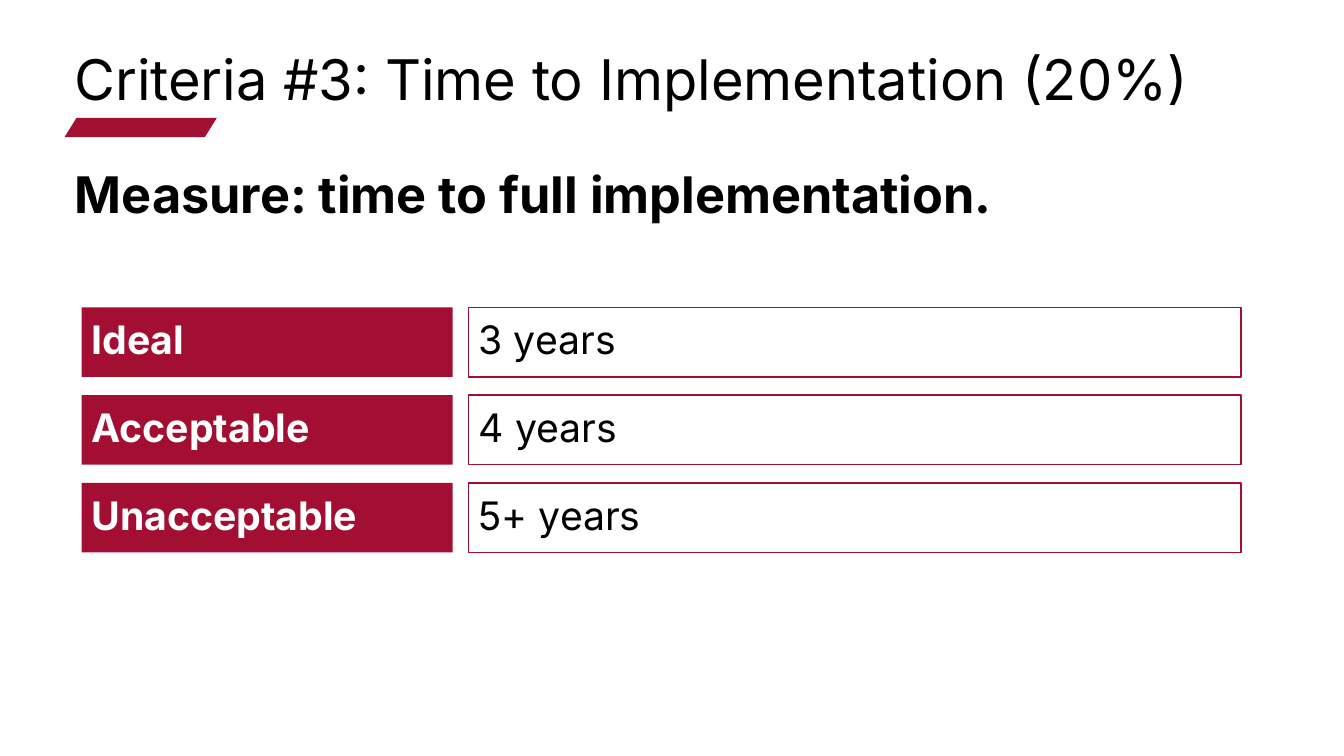
"""Build the slide that rates time to implementation."""
from dataclasses import dataclass

from lxml.etree import SubElement
from pptx import Presentation
from pptx.dml.color import RGBColor
from pptx.enum.shapes import MSO_SHAPE as Preset
from pptx.enum.text import MSO_ANCHOR as Anchor, MSO_AUTO_SIZE as AutoSize, PP_ALIGN as Align
from pptx.oxml.ns import qn
from pptx.shapes.base import BaseShape
from pptx.slide import Slide
from pptx.util import Emu, Pt

PX = 9144
FONT = "Inter"
COLORS = {"crimson": "A30F32", "white": "FFFFFF", "black": "000000"}
ROW_TOP, ROW_PITCH, ROW_HEIGHT = 305, 87, 69


@dataclass(frozen=True)
class Box:
    left: int
    top: int
    width: int
    height: int

    def emu(self) -> list[Emu]:
        return [Emu(value * PX) for value in (self.left, self.top, self.width, self.height)]


@dataclass(frozen=True)
class TextStyle:
    size: int
    color: str
    bold: bool = False
    anchor: Anchor = Anchor.TOP


@dataclass(frozen=True)
class Column:
    left: int
    width: int
    fill: str
    style: TextStyle
    texts: tuple[str, ...]


COLUMNS = (
    Column(81, 368, "crimson", TextStyle(28, "white", True, Anchor.MIDDLE),
           ("Ideal", "Acceptable", "Unacceptable")),
    Column(465, 766, "white", TextStyle(28, "black", False, Anchor.MIDDLE),
           ("3 years", "4 years", "5+ years")),
)


def rgb(name: str) -> RGBColor:
    return RGBColor.from_string(COLORS[name])


def write(shape: BaseShape, text: str, style: TextStyle) -> None:
    frame = shape.text_frame
    frame.text = text
    frame.word_wrap = True
    frame.auto_size = AutoSize.NONE
    frame.vertical_anchor = style.anchor
    paragraph = frame.paragraphs[0]
    paragraph.alignment = Align.LEFT
    paragraph.line_spacing = 0.9
    paragraph.space_before = Pt(0)
    font = paragraph.runs[0].font
    font.name, font.size, font.bold = FONT, Pt(style.size), style.bold
    font.color.rgb = rgb(style.color)


def fill_placeholder(shape: BaseShape, box: Box, text: str, style: TextStyle) -> None:
    shape.left, shape.top, shape.width, shape.height = box.emu()
    write(shape, text, style)
    properties = shape.text_frame.paragraphs[0]._p.get_or_add_pPr()
    properties.set("marL", "0")
    properties.set("indent", "0")
    SubElement(properties, qn("a:buNone"))


def add_panel(slide: Slide, preset: Preset, box: Box, fill: str) -> BaseShape:
    shape = slide.shapes.add_shape(preset, *box.emu())
    shape.shadow.inherit = False
    shape.fill.solid()
    shape.fill.fore_color.rgb = rgb(fill)
    shape.line.fill.background()
    return shape


def add_column(slide: Slide, column: Column) -> None:
    for row, text in enumerate(column.texts):
        box = Box(column.left, ROW_TOP + row * ROW_PITCH, column.width, ROW_HEIGHT)
        cell = add_panel(slide, Preset.RECTANGLE, box, column.fill)
        if column.fill == "white":
            cell.line.color.rgb = rgb("crimson")
            cell.line.width = Pt(1)
        write(cell, text, column.style)


def main() -> None:
    presentation = Presentation()
    presentation.slide_width, presentation.slide_height = Emu(1333 * PX), Emu(750 * PX)
    slide = presentation.slides.add_slide(presentation.slide_layouts[1])
    accent = add_panel(slide, Preset.PARALLELOGRAM, Box(64, 117, 151, 19), "crimson")
    accent.adjustments[0] = 0.62
    fill_placeholder(slide.shapes.title, Box(64, 47, 1216, 55),
                     "Criteria #3: Time to Implementation (20%)", TextStyle(40, "black"))
    fill_placeholder(slide.placeholders[1], Box(64, 164, 1207, 39),
                     "Measure: time to full implementation.", TextStyle(36, "black", True))
    for column in COLUMNS:
        add_column(slide, column)
    presentation.save("out.pptx")


if __name__ == "__main__":
    main()
